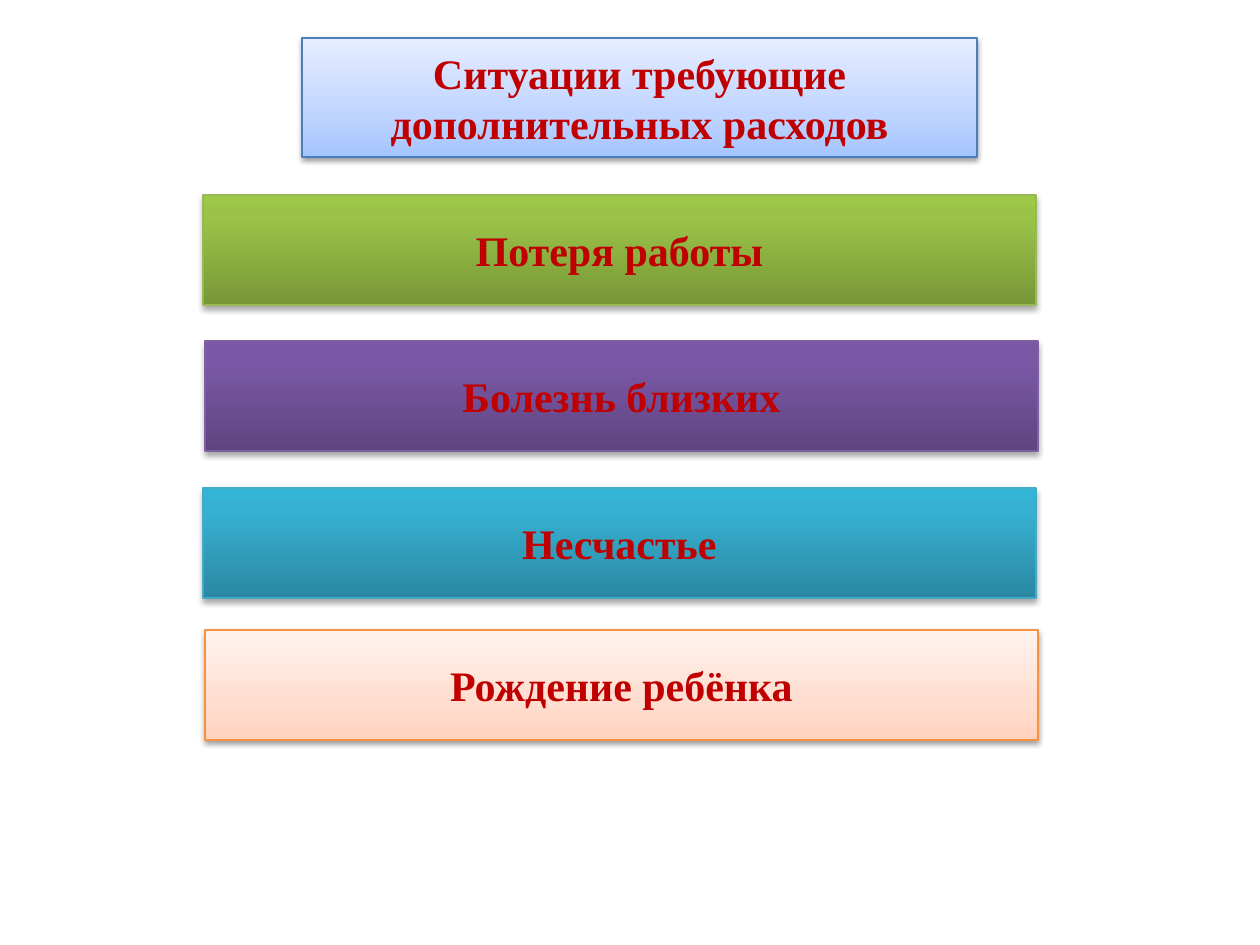
from lxml import etree
from pptx import Presentation
from pptx import util as u
from pptx.dml.color import RGBColor
from pptx.enum import shapes, text
from pptx.oxml.ns import qn

PX = 914400 // 126
THEME = {
    "font": "Times New Roman",
    "size": 24,
    "text": "C00000",
    "line_width": 0.75,
    "blue": {"stops": [(0, "A4C4FF"), (35, "BFD4FF"), (100, "E6EEFF")],
             "line": "4B7EBC", "shadow": (38, 1.6)},
    "green": {"stops": [(0, "779737"), (80, "9BC348"), (100, "9DC746")],
              "line": "98B955", "shadow": (35, 1.8)},
    "purple": {"stops": [(0, "5F4480"), (80, "7B58A6"), (100, "7C57A8")],
               "line": "7D60A0", "shadow": (35, 1.8)},
    "teal": {"stops": [(0, "2A88A2"), (80, "37B1D2"), (100, "34B4D6")],
             "line": "46AAC5", "shadow": (35, 1.8)},
    "peach": {"stops": [(0, "FFD2BD"), (35, "FFDED0"), (100, "FFF2ED")],
              "line": "F69240", "shadow": (38, 1.6)},
}

TITLE = "Ситуации требующие дополнительных расходов"
TITLE_BOX = (302, 38, 675, 119)
SITUATIONS = [
    ("Потеря работы", "green", 195),
    ("Болезнь близких", "purple", 341),
    ("Несчастье", "teal", 488),
    ("Рождение ребёнка", "peach", 630),
]
BAR_LEFTS = (203, 205)
BAR_W, BAR_H = 833, 110


def add_color(parent, value, **modifiers):
    color = etree.SubElement(parent, qn("a:srgbClr"), val=value)
    for name, amount in modifiers.items():
        etree.SubElement(color, qn(f"a:{name}"), val=str(amount * 1000))


def place(s, box):
    s.left, s.top, s.width, s.height = (v * PX for v in box)


def style_box(s, look):
    s.fill.gradient()
    s.fill.gradient_angle = 90
    sp_pr = s._element.spPr
    stops = sp_pr.find(qn("a:gradFill")).find(qn("a:gsLst"))
    for stop in list(stops):
        stops.remove(stop)
    for position, value in look["stops"]:
        add_color(etree.SubElement(stops, qn("a:gs"), pos=str(position * 1000)), value)

    s.line.color.rgb = RGBColor.from_string(look["line"])
    s.line.width = u.Pt(THEME["line_width"])

    s.shadow.inherit = False
    opacity, distance = look["shadow"]
    shadow = etree.SubElement(
        sp_pr.find(qn("a:effectLst")), qn("a:outerShdw"),
        blurRad=str(u.Pt(3.1)), dist=str(u.Pt(distance)),
        dir="5400000", rotWithShape="0")
    add_color(shadow, "000000", alpha=opacity)


def write(s, content, size=THEME["size"], color=THEME["text"], bold=True):
    tf = s.text_frame
    tf.word_wrap = True
    tf.auto_size = text.MSO_AUTO_SIZE.NONE
    tf.vertical_anchor = text.MSO_ANCHOR.MIDDLE
    p = tf.paragraphs[0]
    p.alignment = text.PP_ALIGN.CENTER
    r = p.add_run()
    r.text = content
    r.font.name = THEME["font"]
    r.font.size = u.Pt(size)
    r.font.bold = bold
    r.font.color.rgb = RGBColor.from_string(color)


def main():
    prs = Presentation()
    prs.slide_width, prs.slide_height = u.Inches(10), u.Inches(7.5)
    slide = prs.slides.add_slide(prs.slide_layouts[5])

    title = slide.shapes.title
    place(title, TITLE_BOX)
    style_box(title, THEME["blue"])
    write(title, TITLE)

    for i, (label, look, top) in enumerate(SITUATIONS):
        box = (BAR_LEFTS[i % 2], top, BAR_W, BAR_H)
        bar = slide.shapes.add_shape(shapes.MSO_SHAPE.RECTANGLE, *(v * PX for v in box))
        style_box(bar, THEME[look])
        write(bar, label)

    prs.save("out.pptx")


if __name__ == "__main__":
    main()
